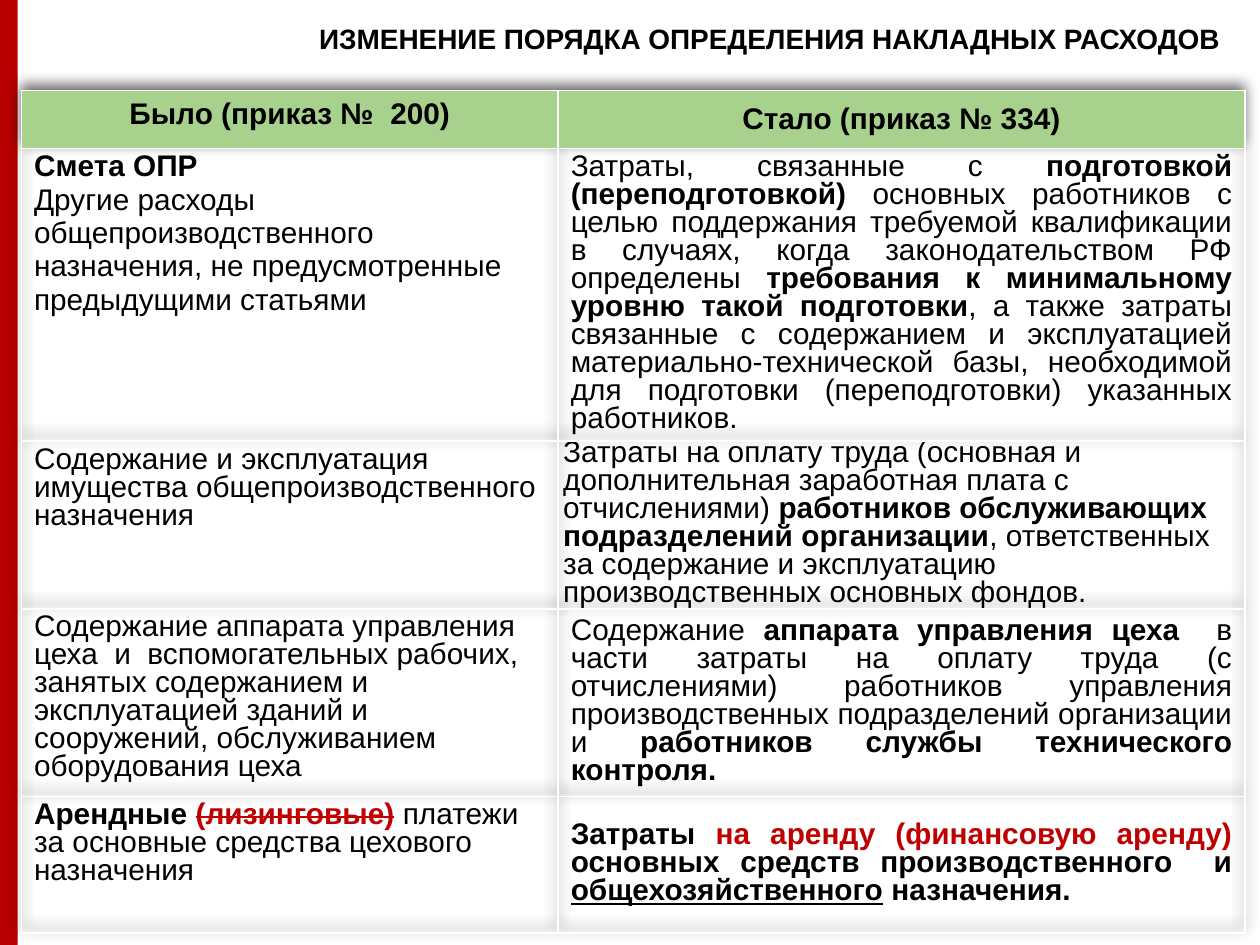
"""Build a slide comparing the old and new rules for overhead costs."""
from typing import NamedTuple, Optional

from lxml.etree import SubElement
from pptx import Presentation
from pptx.dml.color import RGBColor
from pptx.enum.shapes import MSO_SHAPE as Shape
from pptx.enum.text import MSO_ANCHOR as Anchor, MSO_AUTO_SIZE as AutoSize, PP_ALIGN as Align
from pptx.oxml.ns import qn
from pptx.util import Inches, Pt

WIDTH, HEIGHT = 10, 7.5
TABLE_LEFT, TABLE_TOP = 0.17, 0.72
COLUMNS = (4.26, 5.45)
ROWS = (0.46, 2.32, 1.33, 1.49, 1.08)
FONT, TEXT_SIZE = "Arial", 17
BLACK, WHITE, RED, BAND, GREEN = "000000", "FFFFFF", "C00000", "B80000", "A9D18E"


class Run(NamedTuple):
    text: str
    bold: bool = False
    color: str = BLACK
    strike: bool = False
    underline: bool = False


class Line(NamedTuple):
    runs: tuple
    align: Align = Align.LEFT
    spacing: Optional[float] = 16


class Box(NamedTuple):
    lines: tuple
    anchor: Anchor = Anchor.TOP
    fill: Optional[str] = None
    margins: tuple = (0.1, 0.05, 0.1, 0.05)


def header(text: str, anchor: Anchor, spacing: Optional[float]) -> Box:
    """Describe a green heading cell."""
    return Box((Line((Run(text, True),), Align.CENTER, spacing),), anchor, GREEN)


def before(*runs: Run) -> Box:
    """Describe a cell of the old rules."""
    return Box((Line(runs),))


def after(*runs: Run) -> Box:
    """Describe a justified cell of the new rules."""
    return Box((Line(runs, Align.JUSTIFY),), Anchor.MIDDLE)


CELLS = (
    (header("Было (приказ №  200)", Anchor.TOP, None),
     header("Стало (приказ № 334)", Anchor.MIDDLE, 18)),
    (Box((Line((Run("Смета ОПР", True),)),
          Line((Run("Другие расходы общепроизводственного назначения, "
                    "не предусмотренные предыдущими статьями"),), spacing=None))),
     after(Run("Затраты, связанные с "),
           Run("подготовкой (переподготовкой)", True),
           Run(" основных работников с целью поддержания требуемой квалификации "
               "в случаях, когда законодательством РФ определены "),
           Run("требования к минимальному уровню такой подготовки", True),
           Run(", а также затраты связанные с содержанием и эксплуатацией "
               "материально-технической базы, необходимой для подготовки "
               "(переподготовки) указанных работников."))),
    (before(Run("Содержание и эксплуатация имущества общепроизводственного назначения")),
     Box((Line((Run("Затраты на оплату труда (основная и дополнительная заработная плата "
                    "с отчислениями) "),
                Run("работников обслуживающих подразделений организации", True),
                Run(", ответственных за содержание и эксплуатацию производственных "
                    "основных фондов."))),),
         margins=(0.04, 0, 0.01, 0))),
    (before(Run("Содержание аппарата управления цеха  и  вспомогательных рабочих, занятых "
                "содержанием и эксплуатацией зданий и сооружений, обслуживанием "
                "оборудования цеха")),
     after(Run("Содержание "),
           Run("аппарата управления цеха  ", True),
           Run("в части затраты на оплату труда (с отчислениями) работников управления "
               "производственных подразделений организации и "),
           Run("работников службы технического контроля.", True))),
    (before(Run("Арендные ", True),
            Run("(лизинговые)", True, RED, strike=True),
            Run(" ", True),
            Run("платежи за основные средства цехового назначения")),
     after(Run("Затраты ", True),
           Run("на аренду (финансовую аренду) ", True, RED),
           Run("основных средств производственного  и ", True),
           Run("общехозяйственного", True, underline=True),
           Run(" назначения.", True))),
)


def rgb(color: str) -> RGBColor:
    """Turn a hex string into a colour."""
    return RGBColor.from_string(color)


def write_lines(text_frame, lines: tuple, size: float) -> None:
    """Fill a text frame with formatted lines."""
    text_frame.text = "\n".join("" for _ in lines)
    for paragraph, line in zip(text_frame.paragraphs, lines):
        paragraph.alignment = line.align
        if line.spacing:
            paragraph.line_spacing = Pt(line.spacing)
        for item in line.runs:
            run = paragraph.add_run()
            run.text = item.text
            font = run.font
            font.name, font.size, font.bold = FONT, Pt(size), item.bold
            font.underline = item.underline
            font.color.rgb = rgb(item.color)
            if item.strike:
                run._r.get_or_add_rPr().set("strike", "sngStrike")


def add_color(parent, color: str):
    """Append a colour element to an XML parent."""
    return SubElement(parent, qn("a:srgbClr"), val=color)


def draw_cell(cell, box: Box) -> None:
    """Write, fill and outline one table cell."""
    write_lines(cell.text_frame, box.lines, TEXT_SIZE)
    cell.vertical_anchor = box.anchor
    cell.margin_left, cell.margin_top, cell.margin_right, cell.margin_bottom = map(
        Inches, box.margins)
    properties = cell._tc.get_or_add_tcPr()
    for side in ("a:lnL", "a:lnR", "a:lnT", "a:lnB"):
        border = SubElement(properties, qn(side), w=str(Pt(1)))
        add_color(SubElement(border, qn("a:solidFill")), WHITE)
    if box.fill:
        cell.fill.solid()
        cell.fill.fore_color.rgb = rgb(box.fill)
    else:
        cell.fill.background()


def add_shadow(table) -> None:
    """Give the table a soft shadow cast upwards."""
    effects = SubElement(table._tbl.tblPr, qn("a:effectLst"))
    table._tbl.tblPr.insert(0, effects)
    shadow = SubElement(effects, qn("a:outerShdw"), blurRad=str(Inches(0.1)),
                        dist=str(Inches(0.04)), dir="16200000", rotWithShape="0")
    SubElement(add_color(shadow, BLACK), qn("a:alpha"), val="60000")


def draw_table(slide) -> None:
    """Draw the comparison table."""
    table = slide.shapes.add_table(
        len(ROWS), len(COLUMNS), Inches(TABLE_LEFT), Inches(TABLE_TOP),
        Inches(sum(COLUMNS)), Inches(sum(ROWS))).table
    table.first_row = table.horz_banding = False
    add_shadow(table)
    for column, width in zip(table.columns, COLUMNS):
        column.width = Inches(width)
    for row, height, boxes in zip(table.rows, ROWS, CELLS):
        row.height = Inches(height)
        for cell, box in zip(row.cells, boxes):
            draw_cell(cell, box)


def draw_band(slide) -> None:
    """Draw the red band along the left edge."""
    band = slide.shapes.add_shape(
        Shape.RECTANGLE, Inches(-0.01), 0, Inches(0.15), Inches(HEIGHT))
    band.shadow.inherit = False
    band.fill.solid()
    band.fill.fore_color.rgb = rgb(BAND)
    band.line.fill.background()


def draw_title(slide) -> None:
    """Draw the slide title."""
    title = slide.shapes.add_textbox(Inches(1.25), Inches(0.12), Inches(9.72), Inches(0.37))
    title.text_frame.word_wrap = True
    title.text_frame.auto_size = AutoSize.SHAPE_TO_FIT_TEXT
    heading = Run("ИЗМЕНЕНИЕ ПОРЯДКА ОПРЕДЕЛЕНИЯ НАКЛАДНЫХ РАСХОДОВ", True)
    write_lines(title.text_frame, (Line((heading,), Align.CENTER, None),), 16)


def main() -> None:
    """Build and save the presentation."""
    presentation = Presentation()
    presentation.slide_width, presentation.slide_height = Inches(WIDTH), Inches(HEIGHT)
    slide = presentation.slides.add_slide(presentation.slide_layouts[6])
    draw_band(slide)
    draw_title(slide)
    draw_table(slide)
    presentation.save("out.pptx")


if __name__ == "__main__":
    main()
